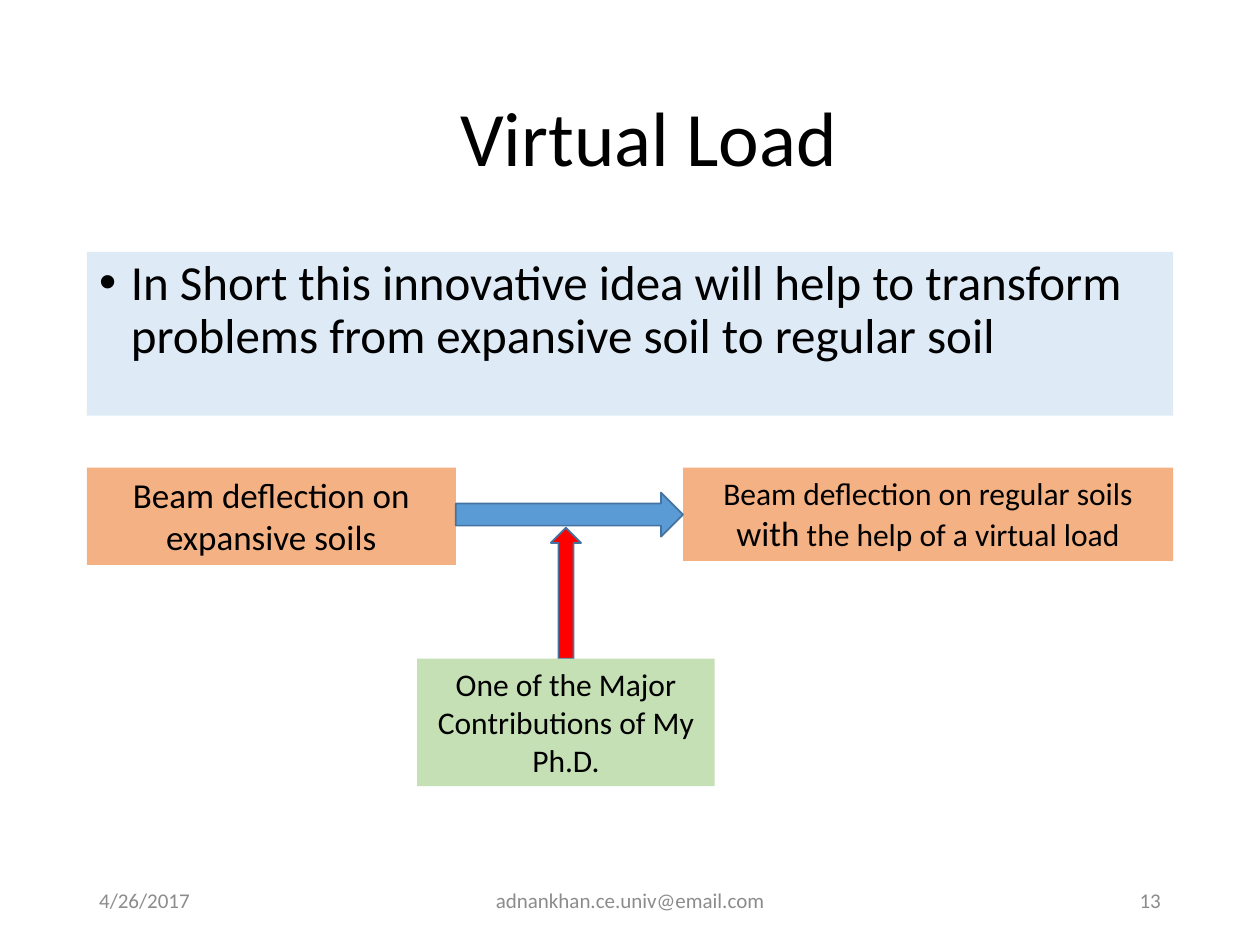
from lxml import etree
from pptx import Presentation
from pptx.dml.color import RGBColor
from pptx.enum.shapes import MSO_SHAPE
from pptx.enum.text import MSO_ANCHOR, PP_ALIGN
from pptx.oxml.ns import qn
from pptx.util import Cm, Pt

RECTANGLE = MSO_SHAPE.RECTANGLE
RIGHT_ARROW, UP_ARROW = MSO_SHAPE.RIGHT_ARROW, MSO_SHAPE.UP_ARROW
LEFT, CENTER, RIGHT = PP_ALIGN.LEFT, PP_ALIGN.CENTER, PP_ALIGN.RIGHT
TOP, MIDDLE = MSO_ANCHOR.TOP, MSO_ANCHOR.MIDDLE

FONT = "Calibri"
BLACK = RGBColor(0x00, 0x00, 0x00)
GRAY = RGBColor(0x8C, 0x8C, 0x8C)
PALE_BLUE = RGBColor(0xDE, 0xEB, 0xF7)
ORANGE = RGBColor(0xF4, 0xB1, 0x83)
GREEN = RGBColor(0xC5, 0xE0, 0xB4)
BLUE = RGBColor(0x5B, 0x9B, 0xD5)
DARK_BLUE = RGBColor(0x43, 0x73, 0x9E)
RED = RGBColor(0xFF, 0x00, 0x00)

MARGIN = 1.75
CONTENT_WIDTH = 21.9
CONTENT_RIGHT = MARGIN + CONTENT_WIDTH
FLOW_TOP = 9.43
FOOTER_TOP, FOOTER_HEIGHT = 17.65, 1.01


def write_text(shape, runs, size=18, color=BLACK, align=CENTER, anchor=TOP,
               line_spacing=None, space_before=None):
    frame = shape.text_frame
    frame.word_wrap = True
    frame.vertical_anchor = anchor
    paragraph = frame.paragraphs[0]
    paragraph.alignment = align
    paragraph.line_spacing = line_spacing
    paragraph.space_before = space_before
    if isinstance(runs, str):
        runs = [(runs, size)]
    for text, run_size in runs:
        run = paragraph.add_run()
        run.text = text
        run.font.name = FONT
        run.font.size = Pt(run_size)
        run.font.color.rgb = color
    return paragraph


def add_label(slide, text, left, top, width, height, **text_format):
    box = slide.shapes.add_textbox(Cm(left), Cm(top), Cm(width), Cm(height))
    write_text(box, text, anchor=MIDDLE, **text_format)


def add_filled_shape(slide, kind, left, top, width, height, fill, outline=None):
    shape = slide.shapes.add_shape(kind, Cm(left), Cm(top), Cm(width), Cm(height))
    shape.shadow.inherit = False
    shape.fill.solid()
    shape.fill.fore_color.rgb = fill
    if outline is None:
        shape.line.fill.background()
    else:
        shape.line.color.rgb = outline
        shape.line.width = Pt(1)
    return shape


def add_text_panel(slide, runs, left, top, width, height, fill, **text_format):
    panel = add_filled_shape(slide, RECTANGLE, left, top, width, height, fill)
    return write_text(panel, runs, **text_format)


def add_bullet(paragraph, indent):
    properties = paragraph._p.get_or_add_pPr()
    properties.set("marL", str(Cm(indent)))
    properties.set("indent", str(-Cm(indent)))
    etree.SubElement(properties, qn("a:buFont")).set("typeface", "Arial")
    etree.SubElement(properties, qn("a:buChar")).set("char", "•")


def add_summary(slide):
    paragraph = add_text_panel(
        slide,
        "In Short this innovative idea will help to transform problems "
        "from expansive soil to regular soil",
        MARGIN, 5.08, CONTENT_WIDTH, 3.3, PALE_BLUE,
        size=28, align=LEFT, line_spacing=0.9, space_before=Pt(10))
    add_bullet(paragraph, 0.64)


def add_flow(slide):
    expansive_width, regular_width = 7.44, 9.88
    expansive_right = MARGIN + expansive_width
    regular_left = CONTENT_RIGHT - regular_width
    add_text_panel(slide, "Beam deflection on expansive soils",
                   MARGIN, FLOW_TOP, expansive_width, 1.96, ORANGE, size=20)
    add_text_panel(slide,
                   [("Beam deflection on regular soils ", 18), ("with", 20),
                    (" the help of a virtual load", 18)],
                   regular_left, FLOW_TOP, regular_width, 1.88, ORANGE)
    add_filled_shape(slide, RIGHT_ARROW, expansive_right, 9.93,
                     regular_left - expansive_right, 0.89, BLUE, DARK_BLUE)

    contribution_left, contribution_top, contribution_width = 8.41, 13.28, 6.0
    arrow_width, arrow_height = 0.61, 2.64
    add_filled_shape(slide, UP_ARROW,
                     contribution_left + (contribution_width - arrow_width) / 2,
                     contribution_top - arrow_height,
                     arrow_width, arrow_height, RED, DARK_BLUE)
    add_text_panel(slide, "One of the Major Contributions of My Ph.D.",
                   contribution_left, contribution_top, contribution_width, 2.57, GREEN)


def add_footer(slide):
    side_width, middle_width = 5.72, 8.59
    for text, left, width, align in (
        ("4/26/2017", MARGIN, side_width, LEFT),
        ("adnankhan.ce.univ@email.com", 8.41, middle_width, CENTER),
        ("13", CONTENT_RIGHT - side_width, side_width, RIGHT),
    ):
        add_label(slide, text, left, FOOTER_TOP, width, FOOTER_HEIGHT,
                  size=12, color=GRAY, align=align)


def main():
    presentation = Presentation()
    presentation.slide_width = Cm(25.4)
    presentation.slide_height = Cm(19.05)
    slide = presentation.slides.add_slide(presentation.slide_layouts[6])
    add_label(slide, "Virtual Load", 2.49, 1.02, 21.18, 3.68,
              size=44, line_spacing=0.9)
    add_summary(slide)
    add_flow(slide)
    add_footer(slide)
    presentation.save("out.pptx")


if __name__ == "__main__":
    main()
